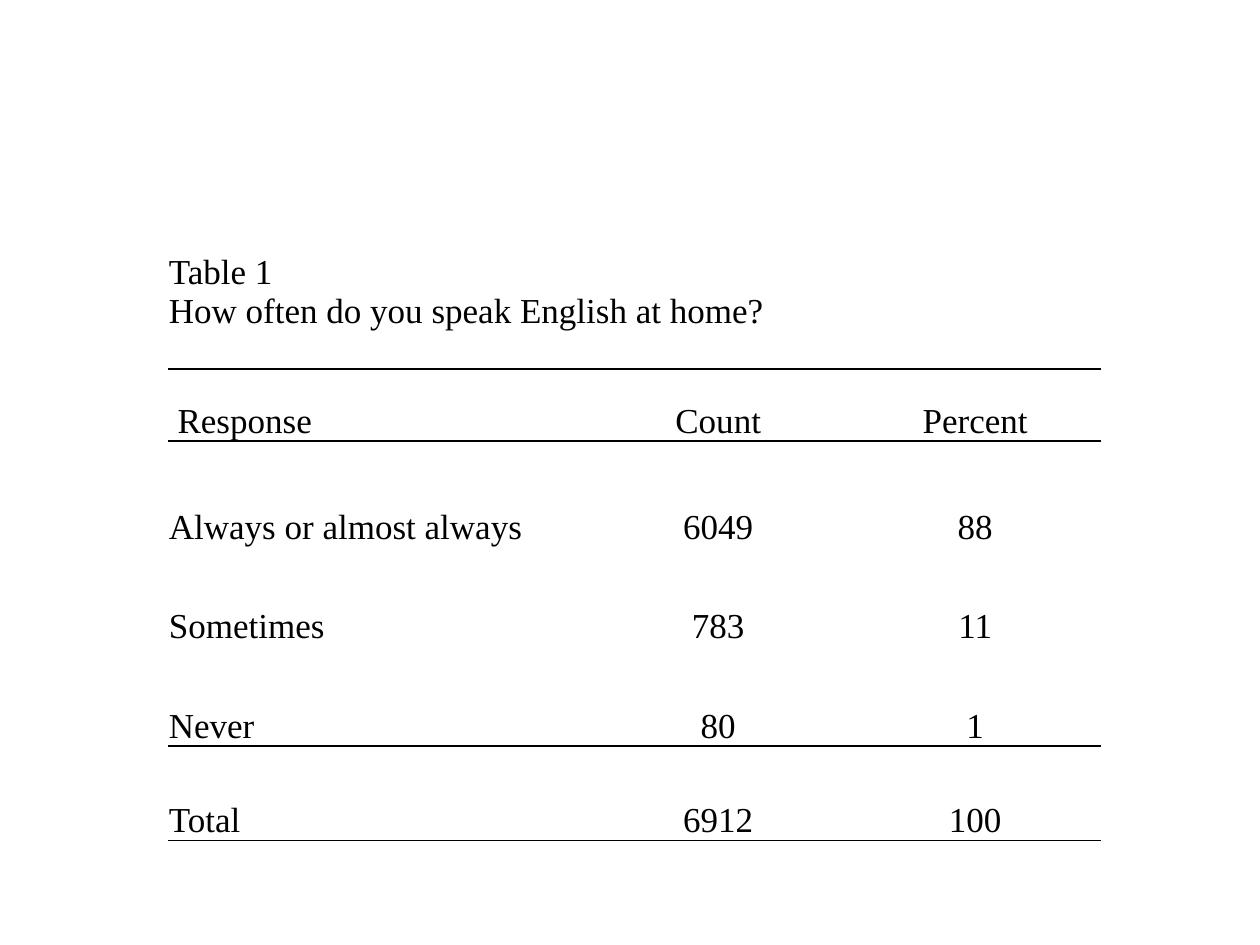
from lxml import etree
from pptx import Presentation
from pptx.dml.color import RGBColor
from pptx.enum.text import MSO_ANCHOR as Anchor, PP_ALIGN as Align
from pptx.oxml import parse_xml
from pptx.oxml.ns import nsdecls, qn
from pptx.util import Inches, Pt

BLACK = "000000"
FONT = "Times New Roman"
NO_STYLE = "{2D5ABB26-0587-4C30-8999-92F81FD0307C}"

TITLE = ["Table 1", "How often do you speak English at home?"]
ROWS = [
    [" Response", "Count", "Percent"],
    ["Always or almost always", "6049", "88"],
    ["Sometimes", "783", "11"],
    ["Never", "80", "1"],
    ["Total", "6912", "100"],
]
COLUMN_WIDTHS = [3.33, 2.08, 2]
ROW_HEIGHTS = [1.1, 0.57, 0.84, 0.79, 0.79, 0.75]
RULED_ROWS = {0, 1, 4, 5}  # rows with a line below


def color(hex_string):
    return RGBColor.from_string(hex_string)


def fill_cell(cell, lines, align, bottom=0):
    cell.fill.background()
    cell.vertical_anchor = Anchor.BOTTOM
    cell.margin_left = cell.margin_right = cell.margin_top = Inches(0.01)
    cell.margin_bottom = Inches(bottom)
    frame = cell.text_frame
    for index, line in enumerate(lines):
        paragraph = frame.add_paragraph() if index else frame.paragraphs[0]
        paragraph.alignment = align
        run = paragraph.add_run()
        run.text = line
        run.font.name = FONT
        run.font.size = Pt(20)
        run.font.color.rgb = color(BLACK)


def rule_below(cell, points=1):
    line = parse_xml(
        f'<a:lnB {nsdecls("a")} w="{Pt(points)}"><a:solidFill>'
        f'<a:srgbClr val="{BLACK}"/></a:solidFill></a:lnB>')
    cell._tc.get_or_add_tcPr().insert(0, line)


def add_response_table(slide, left, top, width, height):
    table = slide.shapes.add_table(
        len(ROW_HEIGHTS), len(COLUMN_WIDTHS), left, top, width, height).table
    table.first_row = table.horz_banding = False
    properties = table._tbl.tblPr
    style = properties.find(qn("a:tableStyleId"))
    if style is None:
        style = etree.SubElement(properties, qn("a:tableStyleId"))
    style.text = NO_STYLE
    for column, column_width in zip(table.columns, COLUMN_WIDTHS):
        column.width = Inches(column_width)
    for row, row_height in zip(table.rows, ROW_HEIGHTS):
        row.height = Inches(row_height)

    # Title across all columns, set one line above its rule
    title = table.cell(0, 0)
    title.merge(table.cell(0, len(COLUMN_WIDTHS) - 1))
    fill_cell(title, TITLE, Align.LEFT, bottom=0.3)

    # Header, responses and total
    for row_index, values in enumerate(ROWS, start=1):
        for column_index, value in enumerate(values):
            align = Align.CENTER if column_index else Align.LEFT
            fill_cell(table.cell(row_index, column_index), [value], align)

    # Horizontal rules
    for row_index in RULED_ROWS:
        for cell in table.rows[row_index].cells:
            rule_below(cell)


def main():
    presentation = Presentation()
    presentation.slide_width = Inches(10)
    presentation.slide_height = Inches(7.5)
    slide = presentation.slides.add_slide(presentation.slide_layouts[6])
    add_response_table(slide, Inches(1.33), Inches(1.83),
                       Inches(sum(COLUMN_WIDTHS)), Inches(sum(ROW_HEIGHTS)))
    presentation.save("out.pptx")


if __name__ == "__main__":
    main()
